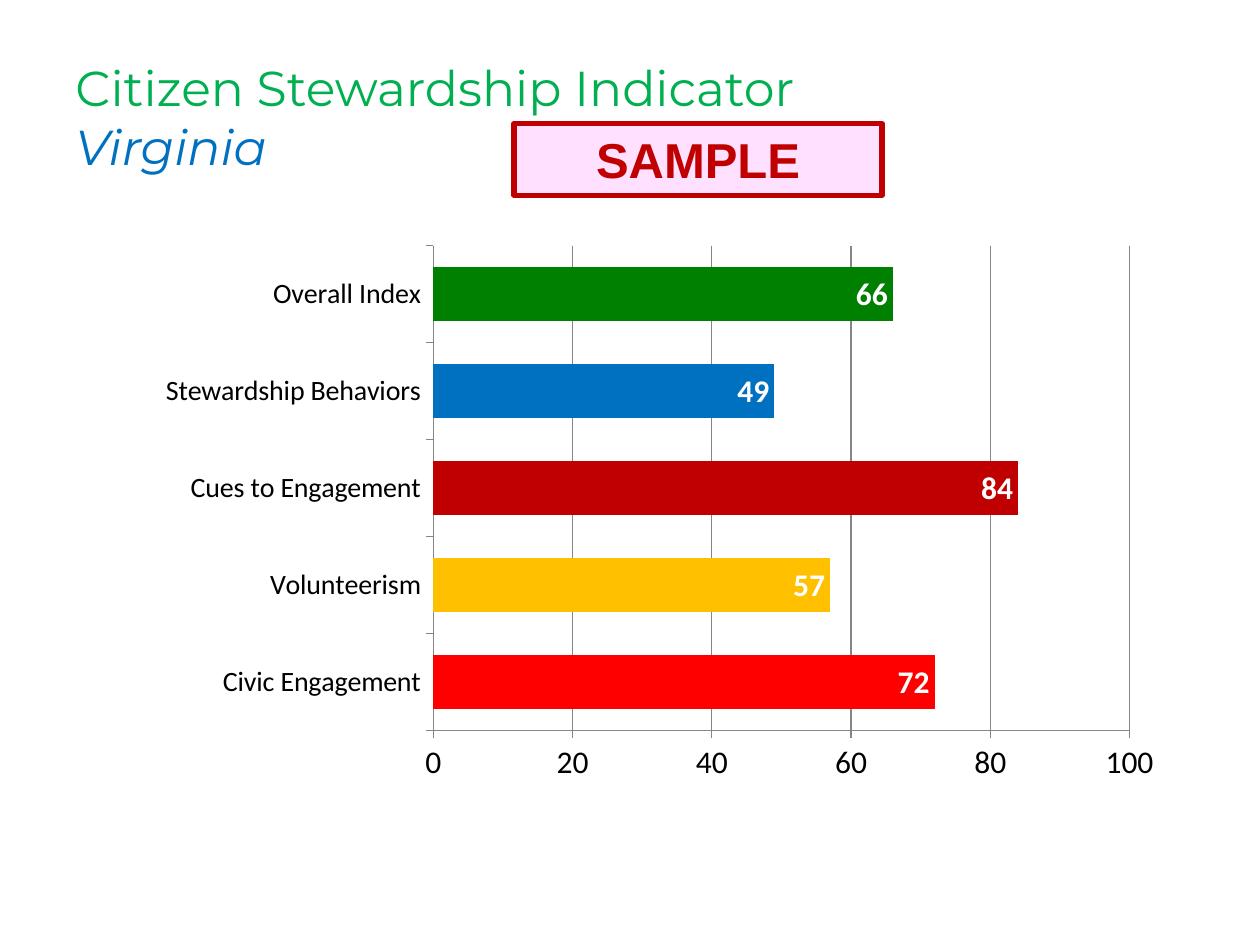
"""Build the Citizen Stewardship Indicator slide for Virginia."""
import pptx
import pptx.chart.data
import pptx.dml.color
import pptx.enum.chart
import pptx.enum.shapes
import pptx.enum.text
import pptx.oxml
import pptx.oxml.ns
import pptx.util
from pptx.util import Inches, Pt

RGBColor = pptx.dml.color.RGBColor
BLACK = RGBColor(0x00, 0x00, 0x00)
WHITE = RGBColor(0xFF, 0xFF, 0xFF)
GRAY = RGBColor(0x86, 0x86, 0x86)
TITLE_GREEN = RGBColor(0x00, 0xB0, 0x50)
BAR_GREEN = RGBColor(0x00, 0x80, 0x00)
BLUE = RGBColor(0x00, 0x70, 0xC0)
DARK_RED = RGBColor(0xC0, 0x00, 0x00)
RED = RGBColor(0xFF, 0x00, 0x00)
GOLD = RGBColor(0xFF, 0xC0, 0x00)
PINK = RGBColor(0xFF, 0xCC, 0xFF)

SCORES = [
    ("Civic Engagement", 72, RED),
    ("Volunteerism", 57, GOLD),
    ("Cues to Engagement", 84, DARK_RED),
    ("Stewardship Behaviors", 49, BLUE),
    ("Overall Index", 66, BAR_GREEN),
]
PLOT_AREA = {"x": 0.33, "y": 0.02, "w": 0.6, "h": 0.77}


def add_title(slide):
    """Add the two-line title with the state in italics."""
    box = slide.shapes.add_textbox(Inches(0.5), Inches(0.3), Inches(9), Inches(1.25))
    frame = box.text_frame
    frame.word_wrap = True
    frame.vertical_anchor = pptx.enum.text.MSO_ANCHOR.MIDDLE
    para = frame.paragraphs[0]
    para.font.name = "Montserrat"
    para.font.size = Pt(28)
    heading = para.add_run()
    heading.text = "Citizen Stewardship Indicator"
    heading.font.color.rgb = TITLE_GREEN
    para.add_line_break()
    state = para.add_run()
    state.text = "Virginia"
    state.font.color.rgb = BLUE
    state.font.italic = True
    for span in para.runs:
        span.font.name = "Montserrat"
        span.font.size = Pt(28)


def style_axis(axis, size):
    """Set the text size, line and outward ticks of an axis."""
    axis.tick_labels.font.size = Pt(size)
    axis.major_tick_mark = pptx.enum.chart.XL_TICK_MARK.OUTSIDE
    axis.minor_tick_mark = pptx.enum.chart.XL_TICK_MARK.NONE
    axis.format.line.color.rgb = GRAY
    axis.format.line.width = Pt(0.75)


def place_plot_area(chart):
    """Fix the inner plot area as fractions of the chart frame."""
    sides = "".join(f'<c:{side}Mode val="edge"/>' for side in "xy")
    sides += "".join(f'<c:{side} val="{part}"/>' for side, part in PLOT_AREA.items())
    layout = pptx.oxml.parse_xml(
        f'<c:layout {pptx.oxml.ns.nsdecls("c")}><c:manualLayout>'
        f'<c:layoutTarget val="inner"/>{sides}</c:manualLayout></c:layout>'
    )
    plot_area = chart.plots[0]._element.getparent()
    for old_layout in plot_area.findall(pptx.oxml.ns.qn("c:layout")):
        plot_area.remove(old_layout)
    plot_area.insert(0, layout)


def style_bars(plot):
    """Colour each bar and put its value inside the end."""
    plot.gap_width = 78
    plot.overlap = 100
    plot.vary_by_categories = False
    series = plot.series[0]
    for index, (_, _, color) in enumerate(SCORES):
        fill = series.points[index].format.fill
        fill.solid()
        fill.fore_color.rgb = color
    labels = series.data_labels
    labels.show_value = True
    labels.position = pptx.enum.chart.XL_LABEL_POSITION.INSIDE_END
    labels.number_format = "0"
    labels.number_format_is_linked = False
    labels.font.size = Pt(18)
    labels.font.bold = True
    labels.font.color.rgb = WHITE


def add_score_chart(slide):
    """Add the bar chart of index scores."""
    data = pptx.chart.data.CategoryChartData(number_format="0")
    data.categories = [name for name, _, _ in SCORES]
    data.add_series("Series 1", [score for _, score, _ in SCORES])
    chart = slide.shapes.add_chart(
        pptx.enum.chart.XL_CHART_TYPE.BAR_STACKED,
        Inches(0.4), Inches(1.85), Inches(9.21), Inches(5), data,
    ).chart
    chart.has_legend = False
    chart.has_title = False
    chart.font.name = "Calibri"
    chart.font.size = Pt(18)
    chart.font.color.rgb = BLACK
    style_axis(chart.category_axis, 16)
    values = chart.value_axis
    style_axis(values, 18)
    values.minimum_scale = 0
    values.maximum_scale = 100
    values.major_unit = 20
    values.has_major_gridlines = True
    values.major_gridlines.format.line.color.rgb = GRAY
    values.major_gridlines.format.line.width = Pt(0.75)
    style_bars(chart.plots[0])
    place_plot_area(chart)


def add_sample_stamp(slide):
    """Add the translucent pink SAMPLE box."""
    stamp = slide.shapes.add_shape(
        pptx.enum.shapes.MSO_SHAPE.RECTANGLE,
        Inches(4.08), Inches(0.98), Inches(2.92), Inches(0.57),
    )
    stamp.shadow.inherit = False
    stamp.fill.solid()
    stamp.fill.fore_color.rgb = PINK
    color = stamp._element.spPr.find(".//" + pptx.oxml.ns.qn("a:srgbClr"))
    color.append(pptx.oxml.parse_xml(
        f'<a:alpha {pptx.oxml.ns.nsdecls("a")} val="60000"/>'
    ))
    stamp.line.color.rgb = DARK_RED
    stamp.line.width = Pt(3)
    stamp.text_frame.word_wrap = True
    para = stamp.text_frame.paragraphs[0]
    para.text = "SAMPLE"
    para.alignment = pptx.enum.text.PP_ALIGN.CENTER
    para.font.name = "Arial"
    para.font.size = Pt(28)
    para.font.bold = True
    para.font.color.rgb = DARK_RED


def main():
    """Build and save the deck."""
    deck = pptx.Presentation()
    deck.slide_width = Inches(10)
    deck.slide_height = Inches(7.5)
    slide = deck.slides.add_slide(deck.slide_layouts[6])
    add_title(slide)
    add_score_chart(slide)
    add_sample_stamp(slide)
    deck.save("out.pptx")


if __name__ == "__main__":
    main()
